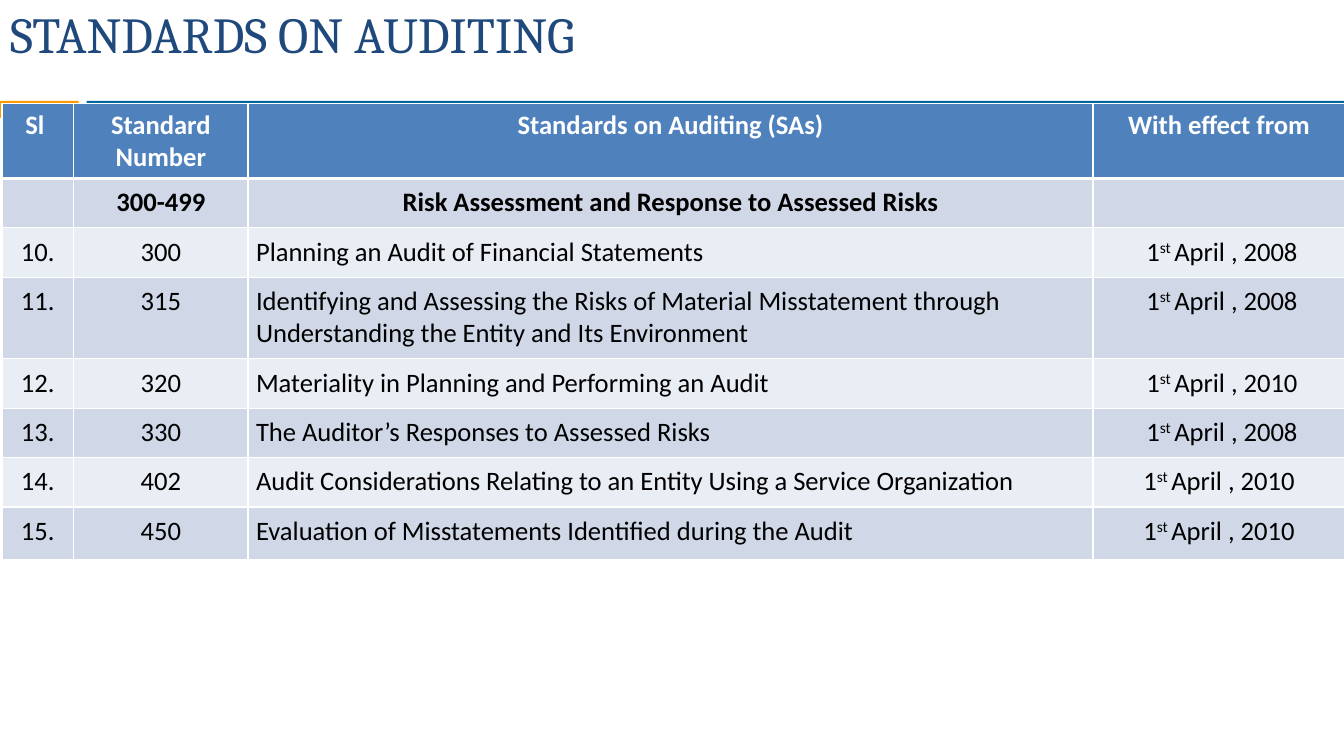
"""Build the Standards on Auditing table slide."""
from lxml import etree
from pptx import Presentation
from pptx.dml.color import RGBColor
from pptx.enum.shapes import MSO_SHAPE
from pptx.enum.text import MSO_ANCHOR, PP_ALIGN
from pptx.oxml.ns import qn
from pptx.util import Inches, Pt

RECT = MSO_SHAPE.RECTANGLE
MIDDLE = MSO_ANCHOR.MIDDLE
LEFT, CENTER = PP_ALIGN.LEFT, PP_ALIGN.CENTER

COLORS = {
    "orange": "FF9900", "teal": "006699", "title": "1F497D",
    "header": "4F81BD", "band": "D0D8E8", "light": "E9EDF4",
    "white": "FFFFFF", "black": "000000",
}
HEADERS = ["Sl ", "Standard Number", "Standards on Auditing (SAs)", "With effect from"]
SECTION = ["", "300-499", "Risk Assessment and Response to Assessed Risks", ""]
STANDARDS = [
    ("10.", "300", "Planning an Audit of Financial Statements", " 1", "2008"),
    ("11.", "315", "Identifying and Assessing the Risks of Material Misstatement through "
     "Understanding the Entity and Its Environment", " 1", "2008"),
    ("12.", "320", "Materiality in Planning and Performing an Audit", " 1", "2010"),
    ("13.", "330", "The Auditor’s Responses to Assessed Risks", " 1", "2008"),
    ("14.", "402", "Audit Considerations Relating to an Entity Using a Service Organization",
     "1", "2010"),
    ("15.", "450", "Evaluation of Misstatements Identified during the Audit", "1", "2010"),
]
COL_WIDTHS = [0.71, 1.73, 8.38, 2.5]
ROW_HEIGHTS = [0.74, 0.49, 0.49, 0.81, 0.49, 0.49, 0.49, 0.52]


def add_run(p, text, size, font, color, bold=False):
    r = p.add_run()
    r.text = text
    r.font.size = Pt(size)
    r.font.name = font
    r.font.bold = bold
    r.font.color.rgb = RGBColor.from_string(COLORS[color])
    return r


def set_borders(cell, bottom):
    tcPr = cell._tc.get_or_add_tcPr()
    sides = [("lnL", 1), ("lnR", 1), ("lnT", 1), ("lnB", bottom)]
    for i, (side, width) in enumerate(sides):
        ln = etree.Element(qn(f"a:{side}"), w=str(Pt(width)))
        fill = etree.SubElement(ln, qn("a:solidFill"))
        etree.SubElement(fill, qn("a:srgbClr"), val=COLORS["white"])
        tcPr.insert(i, ln)


prs = Presentation()
prs.slide_width = Inches(13.33)
prs.slide_height = Inches(7.5)
s = prs.slides.add_slide(prs.slide_layouts[5])

for x, width, color in [(0, 0.78, "orange"), (0.86, 12.47, "teal")]:
    sp = s.shapes.add_shape(RECT, Inches(x), Inches(1), Inches(width), Inches(0.17))
    sp.shadow.inherit = False
    sp.fill.solid()
    sp.fill.fore_color.rgb = RGBColor.from_string(COLORS[color])
    sp.line.fill.background()

title = s.shapes.title
title.left, title.top = Inches(0), Inches(0)
title.width, title.height = Inches(12.78), Inches(0.67)
tf = title.text_frame
tf.vertical_anchor = MIDDLE
p = tf.paragraphs[0]
p.alignment = LEFT
add_run(p, "STANDARDS ON AUDITING", 36, "Cambria", "title")

rows = [HEADERS, SECTION]
rows += [[sl, number, name, (day, year)] for sl, number, name, day, year in STANDARDS]
table = s.shapes.add_table(len(rows), len(COL_WIDTHS), Inches(0.02), Inches(1.03),
                           Inches(sum(COL_WIDTHS)), Inches(sum(ROW_HEIGHTS))).table
for col, width in zip(table.columns, COL_WIDTHS):
    col.width = Inches(width)

for i, values in enumerate(rows):
    table.rows[i].height = Inches(ROW_HEIGHTS[i])
    fill = "header" if i == 0 else "band" if i % 2 else "light"
    color = "white" if i == 0 else "black"
    for j, value in enumerate(values):
        cell = table.cell(i, j)
        cell.fill.solid()
        cell.fill.fore_color.rgb = RGBColor.from_string(COLORS[fill])
        set_borders(cell, 3 if i == 0 else 1)
        if i > 0:
            cell.margin_left = cell.margin_right = Inches(0.08)
            cell.margin_top = cell.margin_bottom = Inches(0.08)
        p = cell.text_frame.paragraphs[0]
        p.alignment = LEFT if i > 1 and j == 2 else CENTER
        if isinstance(value, tuple):
            day, year = value
            add_run(p, day, 19, "Calibri", color)
            r = add_run(p, "st ", 19, "Calibri", color)
            r._r.get_or_add_rPr().set("baseline", "30000")
            add_run(p, f"April , {year}", 19, "Calibri", color)
        elif value:
            add_run(p, value, 19, "Calibri", color, bold=i < 2)

prs.save("out.pptx")
